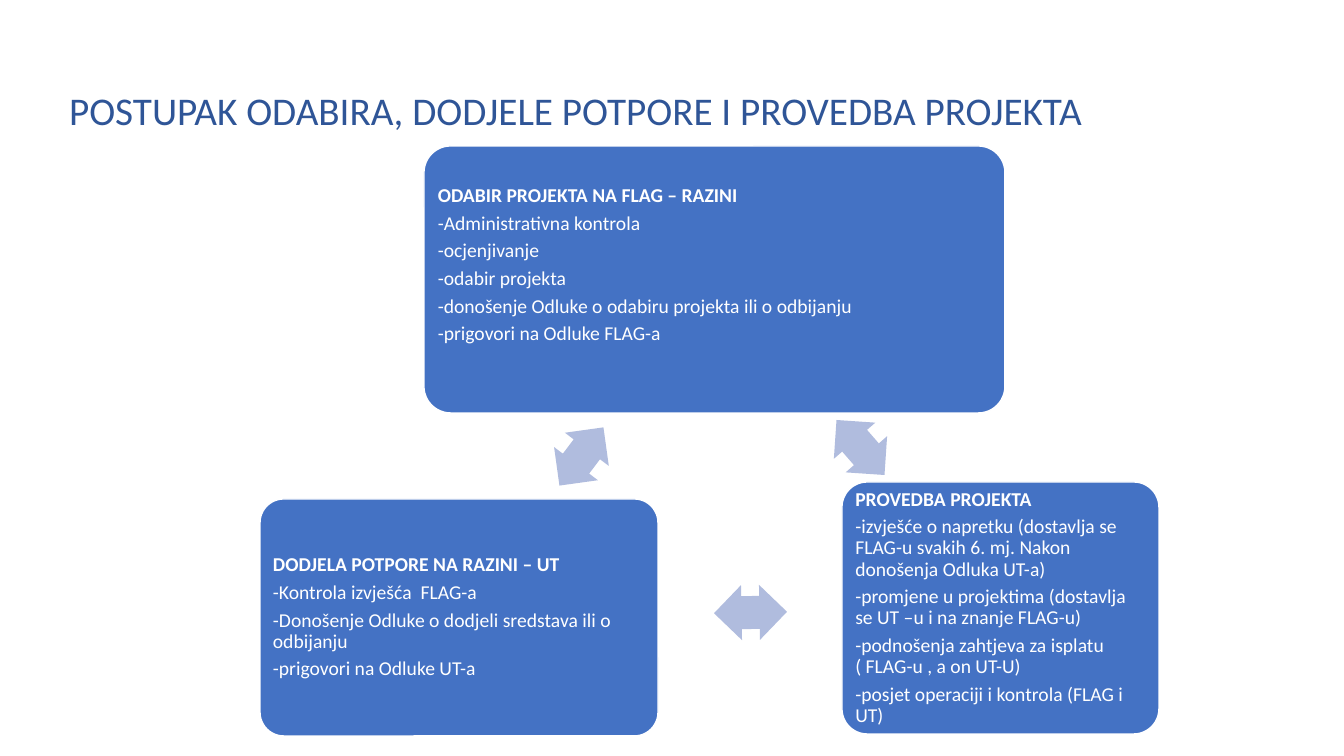
import pptx
import pptx.util
from pptx.dml.color import RGBColor
from pptx.enum.shapes import MSO_SHAPE
from pptx.enum.text import MSO_ANCHOR, MSO_AUTO_SIZE, PP_ALIGN

COLOURS = {"title": "2F5597", "box": "4472C4", "arrow": "B0BCDE", "white": "FFFFFF"}
EMU_PER_PX = 914400 / 100.8


def px(length):
    return pptx.util.Emu(round(length * EMU_PER_PX))


def set_values(target, values):
    for name, value in values.items():
        setattr(target, name, value)


class ProcessSlide:
    font_name = "Calibri"
    inset = 6
    paragraph_format = {"alignment": PP_ALIGN.LEFT, "line_spacing": 0.9,
                        "space_after": pptx.util.Pt(4.6)}

    def __init__(self, presentation):
        self.slide = presentation.slides.add_slide(presentation.slide_layouts[5])

    def colour(self, name):
        return RGBColor.from_string(COLOURS[name])

    def style_font(self, font, size, colour, bold=False):
        set_values(font, {"name": self.font_name, "size": pptx.util.Pt(size), "bold": bold})
        font.color.rgb = self.colour(colour)

    def title(self, text, left, top, width, height):
        title = self.slide.shapes.title
        set_values(title, {"left": px(left), "top": px(top),
                           "width": px(width), "height": px(height)})
        frame = title.text_frame
        frame.text = text
        set_values(frame, {"word_wrap": False, "vertical_anchor": MSO_ANCHOR.MIDDLE,
                           "auto_size": MSO_AUTO_SIZE.SHAPE_TO_FIT_TEXT})
        paragraph = frame.paragraphs[0]
        paragraph.alignment = PP_ALIGN.LEFT
        self.style_font(paragraph.runs[0].font, 28, "title")

    def filled_shape(self, kind, bounds, fill, adjustments):
        shape = self.slide.shapes.add_shape(kind, *map(px, bounds))
        shape.shadow.inherit = False
        shape.fill.solid()
        shape.fill.fore_color.rgb = self.colour(fill)
        for index, value in enumerate(adjustments):
            shape.adjustments[index] = value
        return shape

    def box(self, bounds, heading, steps, space_below=0):
        shape = self.filled_shape(MSO_SHAPE.ROUNDED_RECTANGLE, bounds, "box", [0.1])
        shape.line.color.rgb = self.colour("white")
        shape.line.width = pptx.util.Pt(1)
        frame = shape.text_frame
        inset = px(self.inset)
        set_values(frame, {"word_wrap": True, "vertical_anchor": MSO_ANCHOR.MIDDLE,
                           "margin_left": inset, "margin_right": inset, "margin_top": inset,
                           "margin_bottom": px(self.inset + space_below)})
        frame.text = "\n".join([heading, *steps])
        for index, paragraph in enumerate(frame.paragraphs):
            set_values(paragraph, self.paragraph_format)
            self.style_font(paragraph.runs[0].font, 14, "white", bold=index == 0)

    def arrow(self, left, top, rotation):
        shape = self.filled_shape(MSO_SHAPE.LEFT_RIGHT_ARROW, (left, top, 73, 55),
                                  "arrow", [0.6, 0.5])
        shape.line.fill.background()
        shape.rotation = rotation


def main():
    presentation = pptx.Presentation()
    presentation.slide_width = px(1344)
    presentation.slide_height = px(756)
    process = ProcessSlide(presentation)

    # Title
    process.title("POSTUPAK ODABIRA, DODJELE POTPORE I PROVEDBA PROJEKTA", 59, 81, 1044, 57)

    # Three stages of the cycle
    process.box((424, 146, 581, 267), "ODABIR PROJEKTA NA FLAG – RAZINI", [
        "-Administrativna kontrola",
        "-ocjenjivanje",
        "-odabir projekta",
        "-donošenje Odluke o odabiru projekta ili o odbijanju",
        "-prigovori na Odluke FLAG-a",
    ], space_below=28)
    process.box((842, 482, 317, 252), "PROVEDBA PROJEKTA", [
        "-izvješće o napretku (dostavlja se FLAG-u svakih 6. mj. Nakon donošenja Odluka UT-a)",
        "-promjene u projektima (dostavlja se UT –u i na znanje FLAG-u)",
        "-podnošenja zahtjeva za isplatu ( FLAG-u , a on UT-U)",
        "-posjet operaciji i kontrola (FLAG i UT)",
    ])
    process.box((260, 499, 398, 237), "DODJELA POTPORE NA RAZINI – UT", [
        "-Kontrola izvješća  FLAG-a",
        "-Donošenje Odluke o dodjeli sredstava ili o odbijanju",
        "-prigovori na Odluke UT-a",
    ])

    # Arrows between the stages
    for left, top, rotation in [(824, 420, 48.9), (714, 585, 178.9), (545, 429, 307.1)]:
        process.arrow(left, top, rotation)

    presentation.save("out.pptx")


if __name__ == "__main__":
    main()
